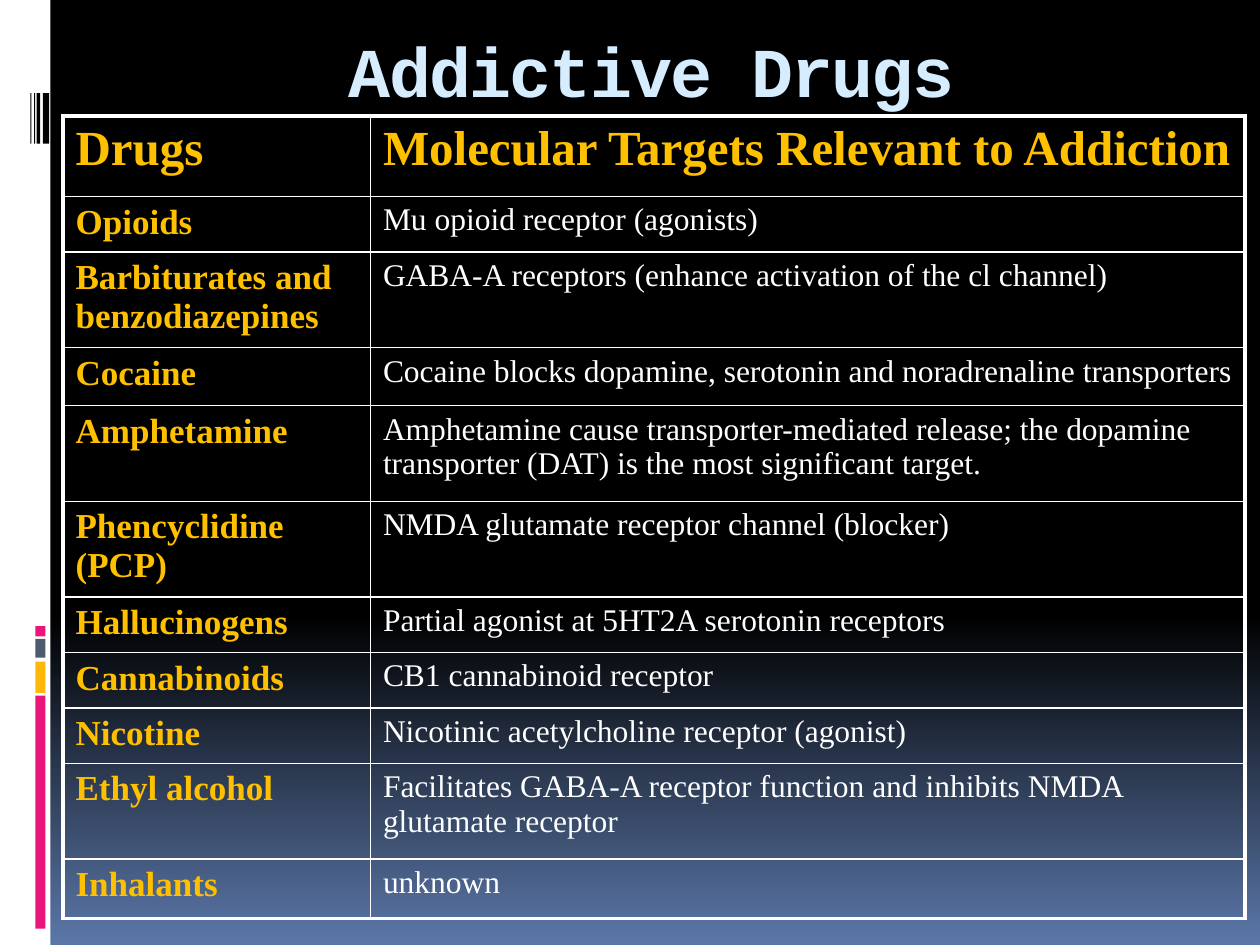
from lxml.etree import SubElement
from pptx import Presentation
from pptx.dml.color import RGBColor
from pptx.enum.shapes import MSO_SHAPE
from pptx.enum.text import MSO_ANCHOR, MSO_AUTO_SIZE, PP_ALIGN
from pptx.oxml.ns import qn
from pptx.util import Inches, Pt

COLORS = {"white": "FFFFFF", "black": "000000", "pink": "EA157A", "amber": "FEB80A",
          "slate": "4E5B6F", "sky": "5B77A8", "title": "D6ECFF", "gold": "FFC000"}

# left, top, width, height, colour
SIDE_BARS = [
    (0, 0, 0.4, 7.5, "white"),
    (0.28, 5.52, 0.08, 1.85, "pink"),
    (0.28, 5.25, 0.08, 0.25, "amber"),
    (0.28, 5.07, 0.08, 0.15, "slate"),
    (0.28, 4.97, 0.08, 0.08, "pink"),
    (0.34, 0.74, 0.05, 0.4, "black"),
    (0.29, 0.74, 0.03, 0.4, "black"),
    (0.27, 0.74, 0.01, 0.4, "black"),
    (0.24, 0.74, 0.01, 0.4, "black"),
]

# row height, drug, target
DRUG_ROWS = [
    (0.64, "Drugs", "Molecular Targets Relevant to Addiction"),
    (0.44, "Opioids", "Mu opioid receptor (agonists)"),
    (0.76, "Barbiturates and benzodiazepines",
     "GABA-A receptors (enhance activation of the cl channel)"),
    (0.46, "Cocaine", "Cocaine blocks dopamine, serotonin and noradrenaline transporters"),
    (0.76, "Amphetamine", "Amphetamine cause transporter-mediated release; the dopamine "
     "transporter (DAT) is the most significant target."),
    (0.76, "Phencyclidine (PCP)", "NMDA glutamate receptor channel (blocker)"),
    (0.44, "Hallucinogens", "Partial agonist at 5HT2A serotonin receptors"),
    (0.44, "Cannabinoids", "CB1 cannabinoid receptor"),
    (0.44, "Nicotine", "Nicotinic acetylcholine receptor (agonist)"),
    (0.76, "Ethyl alcohol",
     "Facilitates GABA-A receptor function and inhibits NMDA glutamate receptor"),
    (0.47, "Inhalants", "unknown"),
]
COLUMN_WIDTHS = [2.44, 6.94]

TITLE_FONT = {"name": "Courier New", "size": Pt(40), "bold": True}
HEADER_FONT = {"name": "Times New Roman", "size": Pt(28), "bold": True}
DRUG_FONT = {**HEADER_FONT, "size": Pt(20)}
TARGET_FONT = {**HEADER_FONT, "size": Pt(18), "bold": False}


def rgb(color):
    return RGBColor.from_string(COLORS[color])


def set_attributes(target, values):
    for name, value in values.items():
        setattr(target, name, value)


def add_span(para, text, font, color):
    span = para.add_run()
    span.text = text
    set_attributes(span.font, font)
    span.font.color.rgb = rgb(color)
    return span


def paint_background(page):
    fill = page.background.fill
    fill.gradient()
    fill.gradient_angle = 270
    for stop, position, color in zip(fill.gradient_stops, (0.65, 1), ("black", "sky")):
        stop.position = position
        stop.color.rgb = rgb(color)


def add_bar(page, left, top, width, height, color):
    bar = page.shapes.add_shape(MSO_SHAPE.RECTANGLE, Inches(left), Inches(top),
                                Inches(width), Inches(height))
    bar.shadow.inherit = False
    bar.fill.solid()
    bar.fill.fore_color.rgb = rgb(color)
    bar.line.fill.background()


def write_title(page, text):
    title = page.shapes.title
    set_attributes(title, {"left": Inches(0.67), "top": Inches(0.17),
                           "width": Inches(9), "height": Inches(0.53)})
    set_attributes(title.text_frame, {
        "auto_size": MSO_AUTO_SIZE.NONE, "vertical_anchor": MSO_ANCHOR.TOP,
        "margin_top": Inches(0.05), "margin_bottom": 0, "word_wrap": True})
    para = title.text_frame.paragraphs[0]
    para.alignment = PP_ALIGN.CENTER
    span = add_span(para, text, TITLE_FONT, "title")
    span.font._element.set("spc", "-100")


def set_borders(cell, widths):
    """Draw white borders; widths are points for left, right, top and bottom."""
    properties = cell._tc.get_or_add_tcPr()
    for side, width in zip("LRTB", widths):
        line = SubElement(properties, qn(f"a:ln{side}"), w=str(Pt(width)))
        fill = SubElement(line, qn("a:solidFill"))
        SubElement(fill, qn("a:srgbClr"), val=COLORS["white"])


def space_before_percent(para, percent):
    spacing = SubElement(para._p.get_or_add_pPr(), qn("a:spcBef"))
    SubElement(spacing, qn("a:spcPct"), val=str(percent * 1000))


def fill_cell(cell, text, font, color):
    para = cell.text_frame.paragraphs[0]
    space_before_percent(para, 20)
    add_span(para, text, font, color)
    cell.margin_right = Inches(0.08)
    cell.fill.background()


def add_drug_table(page):
    heights = [row[0] for row in DRUG_ROWS]
    last = len(DRUG_ROWS) - 1
    table = page.shapes.add_table(
        len(DRUG_ROWS), len(COLUMN_WIDTHS), Inches(0.5), Inches(0.92),
        Inches(sum(COLUMN_WIDTHS)), Inches(sum(heights))).table
    set_attributes(table, {"first_row": False, "horz_banding": False})
    for column, width in zip(table.columns, COLUMN_WIDTHS):
        column.width = Inches(width)
    for index, (height, *texts) in enumerate(DRUG_ROWS):
        table.rows[index].height = Inches(height)
        for side, text in enumerate(texts):
            cell = table.cell(index, side)
            outer = (side == 0, side == 1, index == 0, index == last)
            set_borders(cell, [2.25 if edge else 1 for edge in outer])
            if index == 0:
                fill_cell(cell, text, HEADER_FONT, "gold")
            elif side == 0:
                fill_cell(cell, text, DRUG_FONT, "gold")
            else:
                fill_cell(cell, text, TARGET_FONT, "white")


def main():
    deck = Presentation()
    set_attributes(deck, {"slide_width": Inches(10), "slide_height": Inches(7.5)})
    page = deck.slides.add_slide(deck.slide_layouts[5])
    paint_background(page)
    for bar in SIDE_BARS:
        add_bar(page, *bar)
    write_title(page, "Addictive Drugs")
    add_drug_table(page)
    deck.save("out.pptx")


if __name__ == "__main__":
    main()
